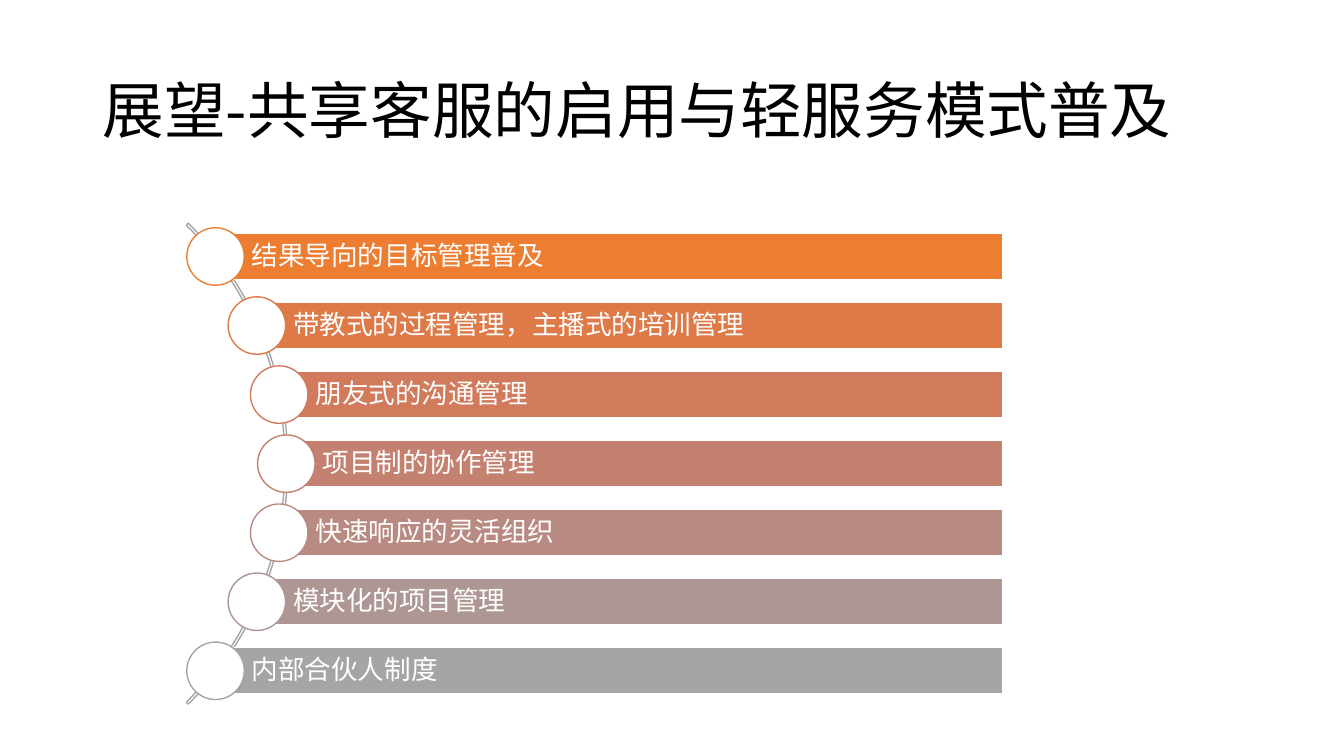
import math

import pptx
import pptx.dml.color
import pptx.enum.shapes
import pptx.enum.text
import pptx.oxml
import pptx.oxml.ns
import pptx.util

Inches = pptx.util.Inches
Pt = pptx.util.Pt
PRESET = pptx.enum.shapes.MSO_SHAPE

COLORS = {"title": "000000", "white": "FFFFFF", "arc": "A5A5A5"}
OUTLOOK = [
    ("结果导向的目标管理普及", "ED7D31"),
    ("带教式的过程管理，主播式的培训管理", "DE7A47"),
    ("朋友式的沟通管理", "D17B5C"),
    ("项目制的协作管理", "C48170"),
    ("快速响应的灵活组织", "B98A82"),
    ("模块化的项目管理", "AE9694"),
    ("内部合伙人制度", "A5A5A5"),
]

ARC_CENTER_X, ARC_CENTER_Y = -0.52, 4.6
ARC_SIZE = 6.75
DOT_ORBIT = 3.36
ROW_PITCH = 0.685
BAR_RIGHT, BAR_HEIGHT = 9.95, 0.46
DOT_SIZE = 0.57


class OutlookSlide:
    font = "Noto Sans CJK SC"

    def __init__(self, slide):
        self.slide = slide

    def color(self, value):
        return pptx.dml.color.RGBColor.from_string(value)

    def shape(self, preset, left, top, width, height, fill, line):
        shape = self.slide.shapes.add_shape(
            preset, Inches(left), Inches(top), Inches(width), Inches(height))
        shape.shadow.inherit = False
        if fill is None:
            shape.fill.background()
        else:
            shape.fill.solid()
            shape.fill.fore_color.rgb = self.color(fill)
        shape.line.color.rgb = self.color(line)
        shape.line.width = Pt(1)
        return shape

    def label(self, shape, text, size, color, insets):
        left, top, right, bottom = map(Inches, insets)
        frame_format = {
            "word_wrap": True,
            "vertical_anchor": pptx.enum.text.MSO_ANCHOR.MIDDLE,
            "margin_left": left,
            "margin_top": top,
            "margin_right": right,
            "margin_bottom": bottom,
        }
        for name, value in frame_format.items():
            setattr(shape.text_frame, name, value)
        paragraph = shape.text_frame.paragraphs[0]
        paragraph.alignment = pptx.enum.text.PP_ALIGN.LEFT
        paragraph.line_spacing = 0.9
        run = paragraph.add_run()
        run.text = text
        font_format = {"size": Pt(size), "name": self.font}
        for name, value in font_format.items():
            setattr(run.font, name, value)
        run.font.color.rgb = self.color(color)
        east_asian = pptx.oxml.parse_xml(
            f'<a:ea {pptx.oxml.ns.nsdecls("a")} typeface="{self.font}"/>')
        run.font._element.find(pptx.oxml.ns.qn("a:latin")).addnext(east_asian)

    def title(self, text):
        heading = self.slide.shapes.add_textbox(
            Inches(0.92), Inches(0.4), Inches(11.5), Inches(1.45))
        self.label(heading, text, 44, COLORS["title"], (0.1, 0.05, 0.1, 0.05))

    def arc(self):
        arc = self.shape(
            PRESET.BLOCK_ARC, ARC_CENTER_X - ARC_SIZE / 2,
            ARC_CENTER_Y - ARC_SIZE / 2, ARC_SIZE, ARC_SIZE, None, COLORS["arc"])
        for index, value in enumerate((189, 27, 0.004)):
            arc.adjustments[index] = value

    def bar(self, left, middle, text, color):
        bar = self.shape(
            PRESET.RECTANGLE, left, middle - BAR_HEIGHT / 2,
            BAR_RIGHT - left, BAR_HEIGHT, color, COLORS["white"])
        self.label(bar, text, 19, COLORS["white"], (0.36, 0.05, 0.05, 0.05))

    def dot(self, center, middle, color):
        self.shape(
            PRESET.OVAL, center - DOT_SIZE / 2, middle - DOT_SIZE / 2,
            DOT_SIZE, DOT_SIZE, COLORS["white"], color)


def main():
    deck = pptx.Presentation()
    deck.slide_width = Inches(13.33)
    deck.slide_height = Inches(7.5)
    outlook = OutlookSlide(deck.slides.add_slide(deck.slide_layouts[6]))

    outlook.title("展望-共享客服的启用与轻服务模式普及")
    outlook.arc()
    for row, (text, color) in enumerate(OUTLOOK):
        offset = (row - len(OUTLOOK) // 2) * ROW_PITCH
        left = ARC_CENTER_X + math.sqrt(DOT_ORBIT ** 2 - offset ** 2)
        outlook.bar(left, ARC_CENTER_Y + offset, text, color)
        outlook.dot(left, ARC_CENTER_Y + offset, color)

    deck.save("out.pptx")


if __name__ == "__main__":
    main()
